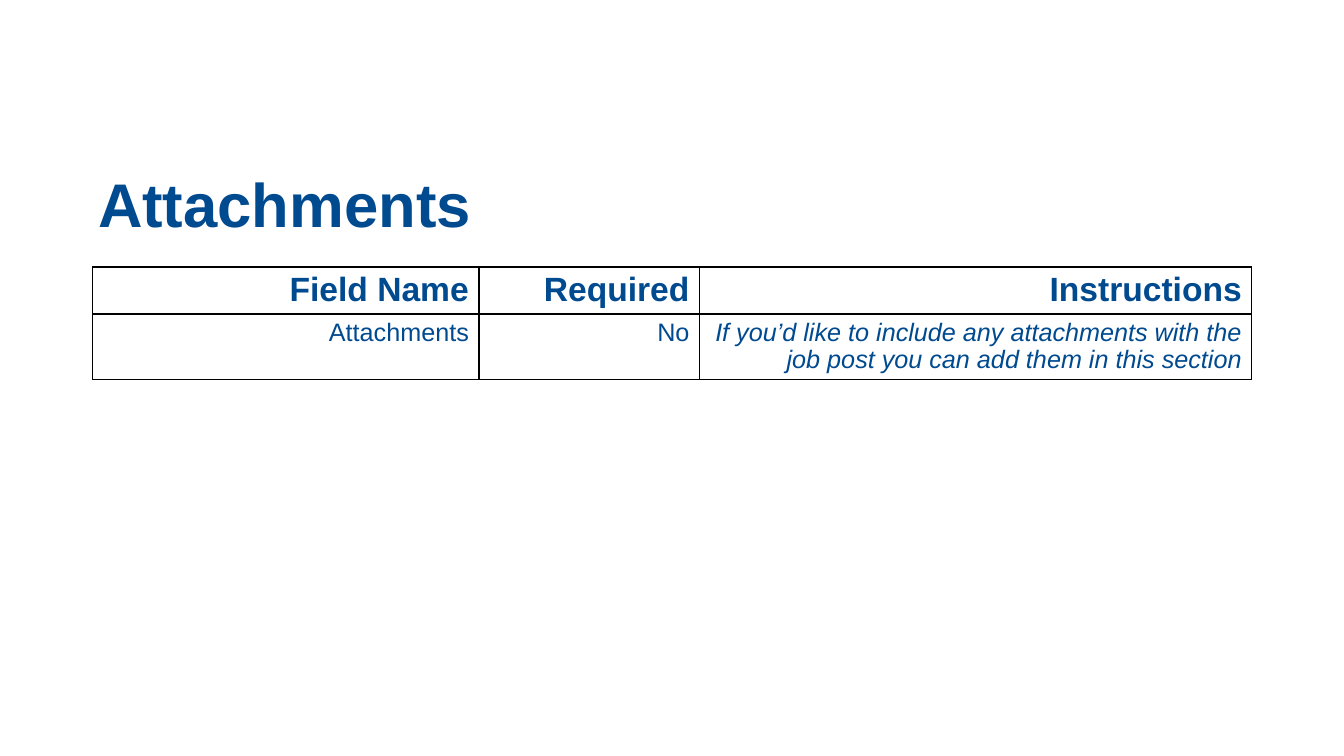
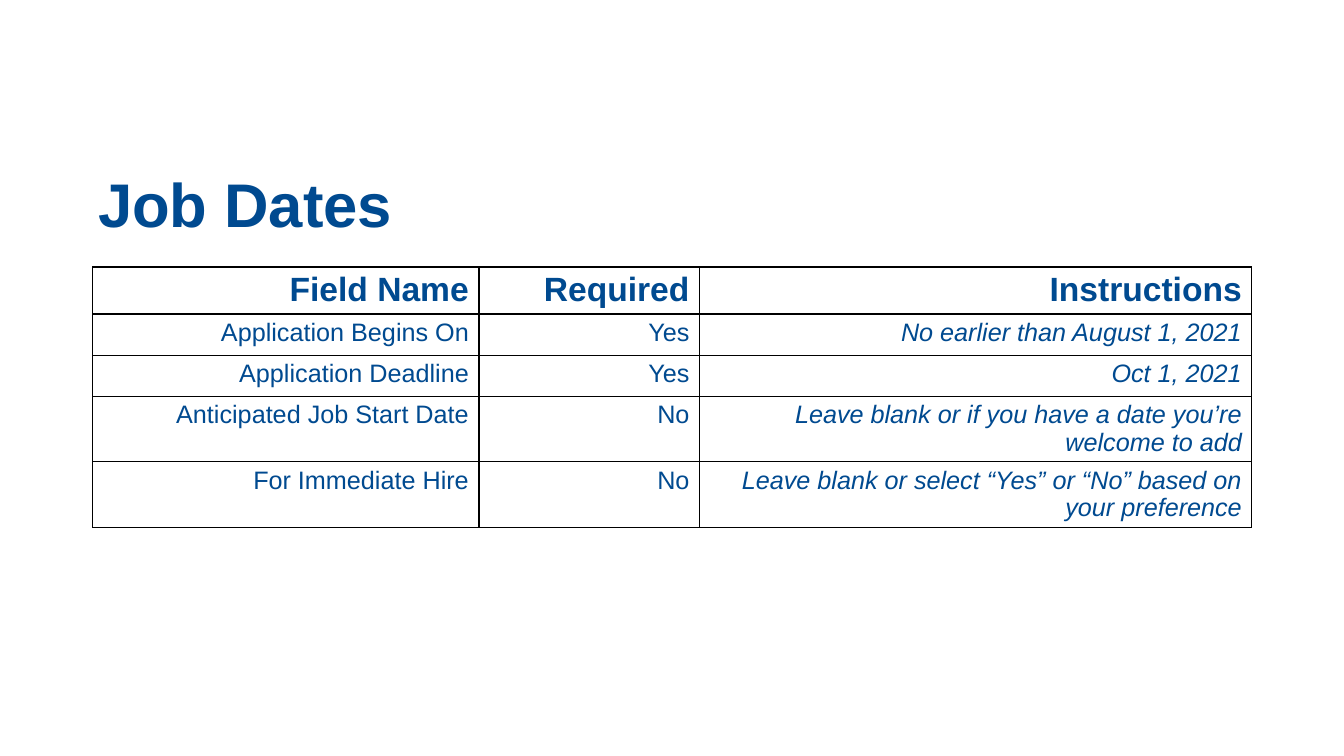
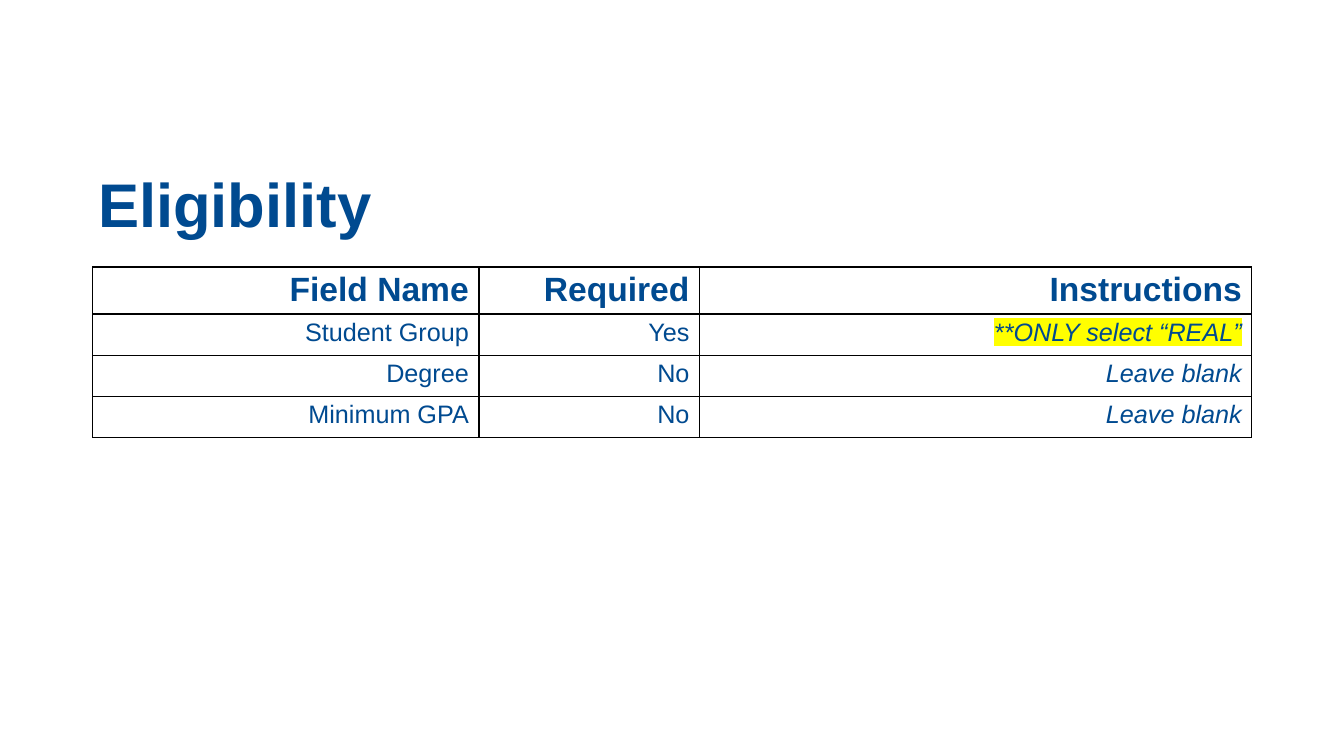
from lxml import etree
from pptx import Presentation
from pptx.dml.color import RGBColor
from pptx.enum.text import MSO_ANCHOR, MSO_AUTO_SIZE, PP_ALIGN
from pptx.oxml.ns import qn
from pptx.util import Cm, Pt

BOTTOM = MSO_ANCHOR.BOTTOM
NO_AUTOFIT = MSO_AUTO_SIZE.NONE
LEFT, RIGHT = PP_ALIGN.LEFT, PP_ALIGN.RIGHT

COLORS = {"text": "004A90", "border": "000000", "highlight": "FFFF00"}
TITLE_FONT = {"name": "Arial", "size": Pt(44), "bold": True}
HEADER_FONT = {"name": "Arial", "size": Pt(24), "bold": True, "italic": False}
BODY_FONT = {"name": "Arial", "size": Pt(18), "bold": False, "italic": False}
INSTRUCTION_FONT = {**BODY_FONT, "italic": True}

MARGIN_LEFT, CONTENT_WIDTH = Cm(2.34), Cm(29.21)
TITLE_PLACE = {"left": MARGIN_LEFT, "top": Cm(2.49),
               "width": CONTENT_WIDTH, "height": Cm(3.68)}
TITLE_FRAME = {"auto_size": NO_AUTOFIT, "vertical_anchor": BOTTOM, "word_wrap": True,
               **{f"margin_{side}": Cm(0.13) for side in ("left", "top", "right", "bottom")}}
TABLE_TOP, ROW_HEIGHT = Cm(6.73), Cm(1.04)
COLUMN_WIDTHS = [Cm(9.73), Cm(5.56), Cm(13.92)]
HEADER = ("Field Name", "Required", "Instructions")
HIGHLIGHTED = {"**ONLY select “REAL”"}

SECTIONS = {
    "Attachments": [
        ("Attachments", "No", "If you’d like to include any attachments with the "
                              "job post you can add them in this section"),
    ],
    "Job Dates": [
        ("Application Begins On", "Yes", "No earlier than August 1, 2021"),
        ("Application Deadline", "Yes", "Oct 1, 2021"),
        ("Anticipated Job Start Date", "No",
         "Leave blank or if you have a date you’re welcome to add"),
        ("For Immediate Hire", "No",
         "Leave blank or select “Yes” or “No” based on your preference"),
    ],
    "Eligibility": [
        ("Student Group", "Yes", "**ONLY select “REAL”"),
        ("Degree", "No", "Leave blank"),
        ("Minimum GPA", "No", "Leave blank"),
    ],
}


def add_text(para, text, font_values):
    span = para.add_run()
    span.text = text
    for name, value in font_values.items():
        setattr(span.font, name, value)
    span.font.color.rgb = RGBColor.from_string(COLORS["text"])
    if text in HIGHLIGHTED:
        highlight = etree.Element(qn("a:highlight"))
        etree.SubElement(highlight, qn("a:srgbClr"), val=COLORS["highlight"])
        span.font.fill  # the highlight must follow the text fill
        span._r.rPr.find(qn("a:solidFill")).addnext(highlight)


def add_borders(cell):
    properties = cell._tc.get_or_add_tcPr()
    for side in ("lnL", "lnR", "lnT", "lnB"):
        line = etree.SubElement(properties, qn(f"a:{side}"), w=str(Pt(1)))
        fill = etree.SubElement(line, qn("a:solidFill"))
        etree.SubElement(fill, qn("a:srgbClr"), val=COLORS["border"])


deck = Presentation()
deck.slide_width, deck.slide_height = Cm(33.87), Cm(19.05)
title_only = deck.slide_layouts[5]

for heading, fields in SECTIONS.items():
    page = deck.slides.add_slide(title_only)
    title = page.shapes.title
    for name, value in TITLE_PLACE.items():
        setattr(title, name, value)
    for name, value in TITLE_FRAME.items():
        setattr(title.text_frame, name, value)
    para = title.text_frame.paragraphs[0]
    para.alignment = LEFT
    para.line_spacing = Pt(42)
    add_text(para, heading, TITLE_FONT)

    rows = [HEADER, *fields]
    table = page.shapes.add_table(len(rows), len(HEADER), MARGIN_LEFT, TABLE_TOP,
                                  CONTENT_WIDTH, ROW_HEIGHT * len(rows)).table
    table.horz_banding = False
    for column, width in zip(table.columns, COLUMN_WIDTHS):
        column.width = width
    for row_index, row in enumerate(rows):
        fonts = (BODY_FONT, BODY_FONT, INSTRUCTION_FONT) if row_index else [HEADER_FONT] * 3
        for column_index, (text, font_values) in enumerate(zip(row, fonts)):
            cell = table.cell(row_index, column_index)
            add_borders(cell)
            cell.fill.background()
            para = cell.text_frame.paragraphs[0]
            para.alignment = RIGHT
            para.line_spacing = 0.98
            add_text(para, text, font_values)

deck.save("out.pptx")
